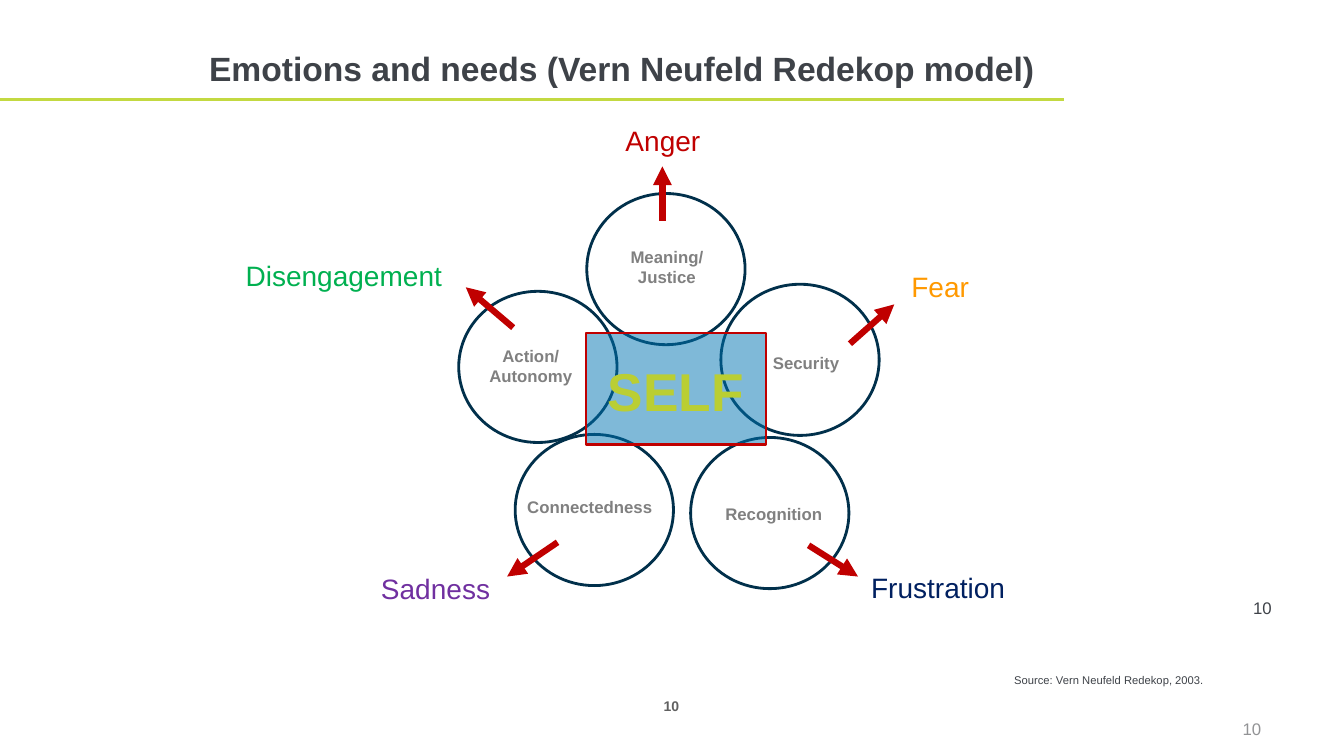
"""Build the slide on emotions and needs around the self."""
from lxml import etree
from pptx import Presentation
from pptx.dml.color import RGBColor
from pptx.enum.shapes import MSO_CONNECTOR, MSO_SHAPE
from pptx.enum.text import MSO_ANCHOR, PP_ALIGN
from pptx.oxml.ns import qn
from pptx.util import Inches, Pt

WHITE = RGBColor(0xFF, 0xFF, 0xFF)
DARK = RGBColor(0x3E, 0x42, 0x48)
GREY = RGBColor(0x80, 0x80, 0x80)
FOOTER_GREY = RGBColor(0x60, 0x60, 0x60)
NUMBER_GREY = RGBColor(0x92, 0x93, 0x95)
NAVY = RGBColor(0x01, 0x30, 0x4B)
LIME = RGBColor(0xC3, 0xD9, 0x41)
OLIVE = RGBColor(0xBA, 0xCE, 0x33)
BLUE = RGBColor(0x00, 0x75, 0xB2)
RED = RGBColor(0xC0, 0x00, 0x00)
GREEN = RGBColor(0x00, 0xB0, 0x50)
ORANGE = RGBColor(0xFF, 0x99, 0x00)
PURPLE = RGBColor(0x70, 0x30, 0xA0)
INDIGO = RGBColor(0x00, 0x20, 0x60)

LEFT, CENTER, RIGHT = PP_ALIGN.LEFT, PP_ALIGN.CENTER, PP_ALIGN.RIGHT
TOP, MIDDLE = MSO_ANCHOR.TOP, MSO_ANCHOR.MIDDLE
PADDED, TIGHT = (0.1, 0.05, 0.1, 0.05), (0, 0, 0, 0)
CIRCLE_SIZE = (1.57, 1.5)

TITLE = ("Emotions and needs (Vern Neufeld Redekop model)", (0, 0.13, 10.55, 1.09))
TITLE_RULE = ((10.55, 0.99), (0, 0.99))
SOURCE = ("Source: Vern Neufeld Redekop, 2003.", (9.96, 6.63, 2.35, 0.24))
PAGE = "10"
SELF = ("SELF", (5.81, 3.3, 1.79, 1.11))

NEEDS = [
    {"circle": (4.55, 2.89), "need": ["Action/", "Autonomy"], "need_box": (4.7, 3.38, 1.13, 0.5),
     "arrow": ((5.09, 3.25), (4.62, 2.85)),
     "emotion": "Disengagement", "emotion_box": (2.17, 2.41, 2.48, 0.68), "color": GREEN},
    {"circle": (5.11, 4.31), "need": ["Connectedness"], "need_box": (5.12, 4.88, 1.46, 0.3),
     "arrow": ((5.53, 5.38), (5.03, 5.72)),
     "emotion": "Sadness", "emotion_box": (3.6, 5.6, 1.44, 0.51), "color": PURPLE},
    {"circle": (6.85, 4.34), "need": ["Recognition"], "need_box": (6.89, 4.95, 1.57, 0.3),
     "arrow": ((8.02, 5.41), (8.51, 5.72)),
     "emotion": "Frustration", "emotion_box": (8.49, 5.55, 1.63, 0.6), "color": INDIGO},
    {"circle": (7.15, 2.82), "need": ["Security"], "need_box": (7.53, 3.45, 0.93, 0.3),
     "arrow": ((8.43, 3.41), (8.87, 3.02)),
     "emotion": "Fear", "emotion_box": (8.89, 2.7, 0.87, 0.33), "color": ORANGE},
    {"circle": (5.82, 1.92), "need": ["Meaning/", "Justice"], "need_box": (6.15, 2.4, 0.93, 0.51),
     "arrow": ((6.57, 2.19), (6.57, 1.65)),
     "emotion": "Anger", "emotion_box": (6.15, 1.21, 0.85, 0.4), "color": RED},
]


def set_all(target, values):
    for name, value in values.items():
        setattr(target, name, value)


def write(holder, lines, size, color, bold=False, align=CENTER, anchor=TOP,
          insets=PADDED, spacing=1.0):
    frame = holder.text_frame
    left, top, right, bottom = map(Inches, insets)
    set_all(frame, {"word_wrap": True, "vertical_anchor": anchor, "margin_left": left,
                    "margin_top": top, "margin_right": right, "margin_bottom": bottom})
    frame.text = "\n".join(lines)
    for paragraph in frame.paragraphs:
        set_all(paragraph, {"alignment": align, "line_spacing": spacing})
        for run in paragraph.runs:
            set_all(run.font, {"name": "Arial", "size": Pt(size), "bold": bold})
            run.font.color.rgb = color


def add_text(slide, lines, box, *style, **options):
    write(slide.shapes.add_textbox(*map(Inches, box)), lines, *style, **options)


def add_outlined(slide, kind, box, fill, line, width):
    shape = slide.shapes.add_shape(kind, *map(Inches, box))
    shape.shadow.inherit = False
    shape.fill.solid()
    shape.fill.fore_color.rgb = fill
    shape.line.color.rgb = line
    shape.line.width = Pt(width)
    return shape


def add_line(slide, ends, color, width, arrow=False):
    start, end = ends
    line = slide.shapes.add_connector(MSO_CONNECTOR.STRAIGHT, *map(Inches, start + end))
    line.line.color.rgb = color
    line.line.width = Pt(width)
    properties = line._element.spPr
    if arrow:
        etree.SubElement(properties.find(qn("a:ln")), qn("a:tailEnd"), type="triangle")
    etree.SubElement(properties, qn("a:effectLst"))


def main():
    deck = Presentation()
    set_all(deck, {"slide_width": Inches(13.33), "slide_height": Inches(7.5)})
    slide = deck.slides.add_slide(deck.slide_layouts[6])

    add_text(slide, [PAGE], (6.4, 6.88, 0.52, 0.24), 10, FOOTER_GREY, bold=True, anchor=MIDDLE)
    add_line(slide, TITLE_RULE, LIME, 2)
    add_text(slide, [PAGE], (12.33, 5.88, 0.87, 0.3), 12, DARK, align=LEFT)
    title, title_box = TITLE
    add_text(slide, [title], title_box, 24, DARK, bold=True, align=RIGHT, anchor=MIDDLE,
             insets=(0.1, 0.05, 0.29, 0.05))
    add_text(slide, [PAGE], (11.97, 7.13, 0.54, 0.22), 12, NUMBER_GREY, align=RIGHT, insets=TIGHT)

    for need in NEEDS:
        add_outlined(slide, MSO_SHAPE.FLOWCHART_CONNECTOR, need["circle"] + CIRCLE_SIZE,
                     WHITE, NAVY, 2)
    for need in NEEDS:
        add_text(slide, need["need"], need["need_box"], 12, GREY, bold=True)

    self_word, self_box = SELF
    self_panel = add_outlined(slide, MSO_SHAPE.RECTANGLE, self_box, BLUE, RED, 1.5)
    fill_color = self_panel._element.spPr.find(qn("a:solidFill"))[0]
    etree.SubElement(fill_color, qn("a:alpha"), val="50000")
    write(self_panel, [self_word], 38, OLIVE, bold=True, anchor=MIDDLE,
          insets=(0.1, 0.09, 0.1, 0.05))

    for need in NEEDS:
        add_line(slide, need["arrow"], RED, 4.5, arrow=True)
        add_text(slide, [need["emotion"]], need["emotion_box"], 20, need["color"],
                 anchor=MIDDLE, insets=TIGHT, spacing=0.9)

    source, source_box = SOURCE
    add_text(slide, [source], source_box, 8, DARK, align=LEFT)
    deck.save("out.pptx")


if __name__ == "__main__":
    main()
